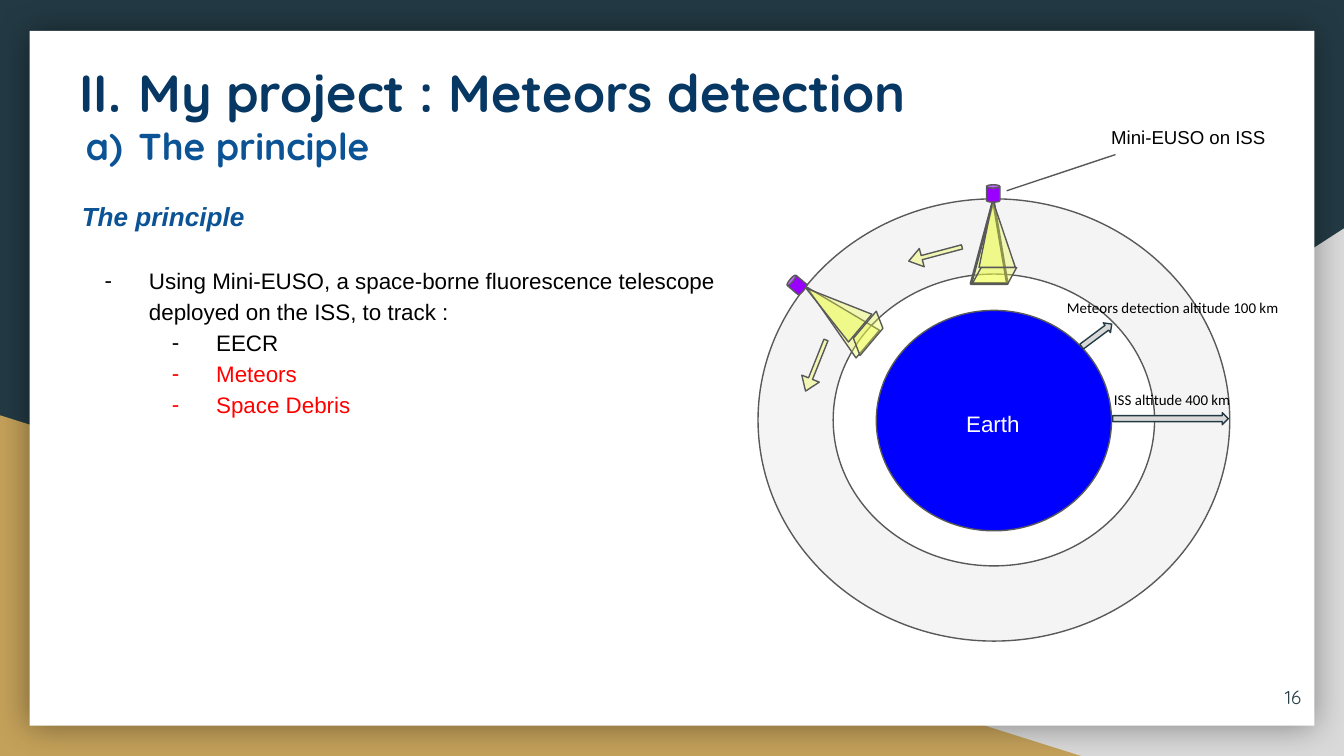
"""Build the slide that explains the principle of meteor detection."""
from dataclasses import dataclass

import pptx
import pptx.dml.color
import pptx.enum.shapes
import pptx.enum.text
import pptx.oxml
import pptx.oxml.ns
import pptx.util

Inches = pptx.util.Inches
Pt = pptx.util.Pt
SHAPE = pptx.enum.shapes.MSO_SHAPE
ALIGN = pptx.enum.text.PP_ALIGN
ANCHOR = pptx.enum.text.MSO_ANCHOR
NAMESPACE = pptx.oxml.ns.nsdecls("a")


@dataclass(frozen=True)
class Theme:
    """Colours, fonts and type sizes of the slide."""
    dark: str = "233A44"
    gold: str = "C4A15A"
    grey: str = "D9D9D9"
    white: str = "FFFFFF"
    black: str = "000000"
    red: str = "FF0000"
    navy: str = "073763"
    blue: str = "0B5394"
    earth: str = "0000FF"
    orbit: str = "EEEEEE"
    beam: str = "EEFF41"
    telescope: str = "9900FF"
    outline: str = "595959"
    heading_font: str = "Quicksand"
    body_font: str = "Arial"
    altitude_font: str = "Calibri"
    title: int = 28
    subtitle: int = 20
    lead: int = 14
    body: int = 12
    label: int = 10
    altitude: int = 8
    line: float = 0.75


THEME = Theme()


def rgb(color):
    """Return the colour object for a hexadecimal value."""
    return pptx.dml.color.RGBColor.from_string(color)


def add_shape(slide, kind, box, fill, line=None, width=THEME.line, alpha=None,
              rotation=0, adjustments=()):
    """Add a preset shape; box holds left, top, width and height in inches."""
    shape = slide.shapes.add_shape(kind, *map(Inches, box))
    shape.shadow.inherit = False
    shape.rotation = rotation
    for index, value in enumerate(adjustments):
        shape.adjustments[index] = value
    shape.fill.solid()
    shape.fill.fore_color.rgb = rgb(fill)
    if alpha is not None:
        color = shape.element.spPr.xpath("a:solidFill/a:srgbClr")[0]
        color.append(pptx.oxml.parse_xml(f'<a:alpha {NAMESPACE} val="{alpha * 1000}"/>'))
    if line:
        shape.line.color.rgb = rgb(line)
        shape.line.width = Pt(width)
    else:
        shape.line.fill.background()
    return shape


def add_centered(slide, kind, center, size, fill, **style):
    """Add an outlined shape around a centre point."""
    box = (center[0] - size[0] / 2, center[1] - size[1] / 2, *size)
    return add_shape(slide, kind, box, fill, THEME.outline, **style)


def set_frame(shape, anchor=ANCHOR.TOP):
    """Give a text frame wrapping and even insets, and return it."""
    frame = shape.text_frame
    frame.word_wrap = True
    frame.auto_size = pptx.enum.text.MSO_AUTO_SIZE.NONE
    frame.vertical_anchor = anchor
    frame.margin_left = frame.margin_right = Inches(0.1)
    frame.margin_top = frame.margin_bottom = Inches(0.1)
    return frame


def add_run(paragraph, text, size, color, font, bold=False, italic=False):
    """Add a formatted run to a paragraph."""
    run = paragraph.add_run()
    run.text = text
    run.font.size = Pt(size)
    run.font.name = font
    run.font.color.rgb = rgb(color)
    run.font.bold = bold
    run.font.italic = italic


def set_bullet(paragraph, mark, color, font, margin, indent):
    """Give a paragraph a hanging bullet or number."""
    properties = paragraph._p.get_or_add_pPr()
    properties.set("marL", str(Inches(margin)))
    properties.set("indent", str(Inches(indent)))
    for xml in (f'<a:buClr {NAMESPACE}><a:srgbClr val="{color}"/></a:buClr>',
                f'<a:buFont {NAMESPACE} typeface="{font}"/>',
                f"<a:{mark.replace(' ', f' {NAMESPACE} ', 1)}/>"):
        properties.append(pptx.oxml.parse_xml(xml))


def add_label(slide, box, text, size, color, font, align=ALIGN.LEFT, anchor=ANCHOR.TOP):
    """Add a one-line text box."""
    paragraph = set_frame(slide.shapes.add_textbox(*map(Inches, box)), anchor).paragraphs[0]
    paragraph.alignment = align
    add_run(paragraph, text, size, color, font)


def add_backdrop(slide):
    """Draw the coloured corners and the white card."""
    slide.background.fill.solid()
    slide.background.fill.fore_color.rgb = rgb(THEME.dark)
    corner = add_shape(slide, SHAPE.RIGHT_TRIANGLE, (3.92, 1.7, 6.08, 3.93), THEME.grey)
    corner.element.spPr.get_or_add_xfrm().set("flipH", "1")
    add_shape(slide, SHAPE.RIGHT_TRIANGLE, (0, 3.09, 8.06, 2.54), THEME.gold)
    card = add_shape(slide, SHAPE.RECTANGLE, (0.22, 0.23, 9.56, 5.17), THEME.white)
    effects = card.element.spPr.find(pptx.oxml.ns.qn("a:effectLst"))
    effects.append(pptx.oxml.parse_xml(
        f'<a:outerShdw {NAMESPACE} blurRad="{Pt(18)}" dist="0" dir="0" algn="ctr" '
        f'rotWithShape="0"><a:srgbClr val="{THEME.black}"><a:alpha val="40000"/>'
        '</a:srgbClr></a:outerShdw>'))


def add_title(slide):
    """Fill the title placeholder with the numbered headings."""
    title = slide.shapes.title
    title.left, title.top, title.width, title.height = map(Inches, (0.43, 0.35, 6.46, 1.04))
    frame = set_frame(title)
    headings = (
        ("My project : Meteors detection", THEME.title, THEME.navy, -0.44,
         'buAutoNum type="romanUcPeriod" startAt="2"'),
        ("The principle", THEME.subtitle, THEME.blue, -0.39, 'buAutoNum type="alphaLcParenR"'),
    )
    for index, (text, size, color, indent, mark) in enumerate(headings):
        paragraph = frame.add_paragraph() if index else frame.paragraphs[0]
        set_bullet(paragraph, mark, color, THEME.heading_font, 0.5, indent)
        paragraph.alignment = ALIGN.LEFT
        add_run(paragraph, text, size, color, THEME.heading_font, bold=True)


def add_body(slide):
    """Write the lead line and the bulleted goals."""
    frame = set_frame(slide.shapes.add_textbox(*map(Inches, (0.51, 1.39, 5.45, 2.01))))
    add_run(frame.paragraphs[0], "The principle", THEME.lead, THEME.blue, THEME.body_font,
            bold=True, italic=True)
    bullets = (
        ("Using Mini-EUSO, a space-borne fluorescence telescope deployed on the ISS, to track :",
         0, THEME.black),
        ("EECR", 1, THEME.black),
        ("Meteors", 1, THEME.red),
        ("Space Debris", 1, THEME.red),
    )
    for index, (text, level, color) in enumerate(bullets):
        paragraph = frame.add_paragraph()
        paragraph.level = level
        set_bullet(paragraph, 'buChar char="-"', color, THEME.body_font, 0.5 + level / 2, -0.33)
        paragraph.line_spacing = 1.15
        paragraph.space_before = Pt(0 if index else 17)
        add_run(paragraph, text, THEME.body, color, THEME.body_font)


def add_telescope(slide, back, base, front, body, arrow, rotation, arrow_rotation, width):
    """Draw a telescope, its field of view and its direction of travel."""
    beam = {"fill": THEME.beam, "alpha": 36}
    add_centered(slide, SHAPE.ISOSCELES_TRIANGLE, back, (0.27, 0.62), rotation=rotation,
                 width=width, adjustments=(0.615,), **beam)
    add_centered(slide, SHAPE.FLOWCHART_DATA, base, (0.33, 0.12), rotation=rotation, **beam)
    add_centered(slide, SHAPE.ISOSCELES_TRIANGLE, front, (0.27, 0.5), rotation=rotation,
                 adjustments=(0.377,), **beam)
    add_centered(slide, SHAPE.CAN, body, (0.1, 0.13), THEME.telescope, rotation=rotation)
    add_centered(slide, SHAPE.LEFT_ARROW, arrow, (0.41, 0.14), rotation=arrow_rotation,
                 adjustments=(0.23, 0.716), **beam)


def add_orbit(slide):
    """Draw the Earth, the orbit ring and the telescopes."""
    add_shape(slide, SHAPE.OVAL, (6.52, 2.31, 1.75, 1.64), THEME.earth, THEME.outline)
    add_shape(slide, SHAPE.DONUT, (5.64, 1.48, 3.51, 3.29), THEME.orbit, THEME.outline,
              alpha=62, adjustments=(0.17,))
    add_label(slide, (7.09, 2.95, 1.18, 0.46), "Earth", THEME.body, THEME.white, THEME.body_font)
    leader = slide.shapes.add_connector(pptx.enum.shapes.MSO_CONNECTOR.STRAIGHT,
                                        *map(Inches, (7.49, 1.42, 8.3, 1.15)))
    leader.line.color.rgb = rgb(THEME.outline)
    leader.line.width = Pt(THEME.line)
    leader.element.spPr.append(pptx.oxml.parse_xml(f"<a:effectLst {NAMESPACE}/>"))
    add_label(slide, (8.17, 0.84, 1.5, 0.37), "Mini-EUSO on ISS", THEME.label, THEME.black,
              THEME.body_font)
    add_telescope(slide, (7.36, 1.8), (7.4, 2.05), (7.42, 1.74), (7.39, 1.44), (6.96, 1.89),
                  0, 345.1, 1.5)
    add_telescope(slide, (6.22, 2.36), (6.46, 2.48), (6.21, 2.28), (5.93, 2.12), (6.07, 2.72),
                  310.2, 291.8, THEME.line)


def add_altitude(slide, arrow_box, rotation, label_box, text):
    """Draw an altitude arrow and its label."""
    add_shape(slide, SHAPE.RIGHT_ARROW, arrow_box, THEME.grey, THEME.dark, rotation=rotation)
    add_label(slide, label_box, text, THEME.altitude, THEME.black, THEME.altitude_font)


def main():
    """Build and save the presentation."""
    presentation = pptx.Presentation()
    presentation.slide_width = Inches(10)
    presentation.slide_height = Inches(10 * 9 / 16)
    slide = presentation.slides.add_slide(presentation.slide_layouts[5])
    add_backdrop(slide)
    title = slide.shapes.title.element
    title.getparent().append(title)
    add_body(slide)
    add_title(slide)
    add_label(slide, (9.18, 4.97, 0.6, 0.43), "16", THEME.label, THEME.dark,
              THEME.heading_font, ALIGN.RIGHT, ANCHOR.MIDDLE)
    add_orbit(slide)
    add_altitude(slide, (8.28, 3.07, 0.86, 0.09), 0, (8.19, 2.81, 1.1, 0.26),
                 "ISS altitude 400 km")
    add_altitude(slide, (8.02, 2.45, 0.28, 0.09), 323.2, (7.84, 2.12, 1.81, 0.26),
                 "Meteors detection altitude 100 km")
    presentation.save("out.pptx")


if __name__ == "__main__":
    main()
